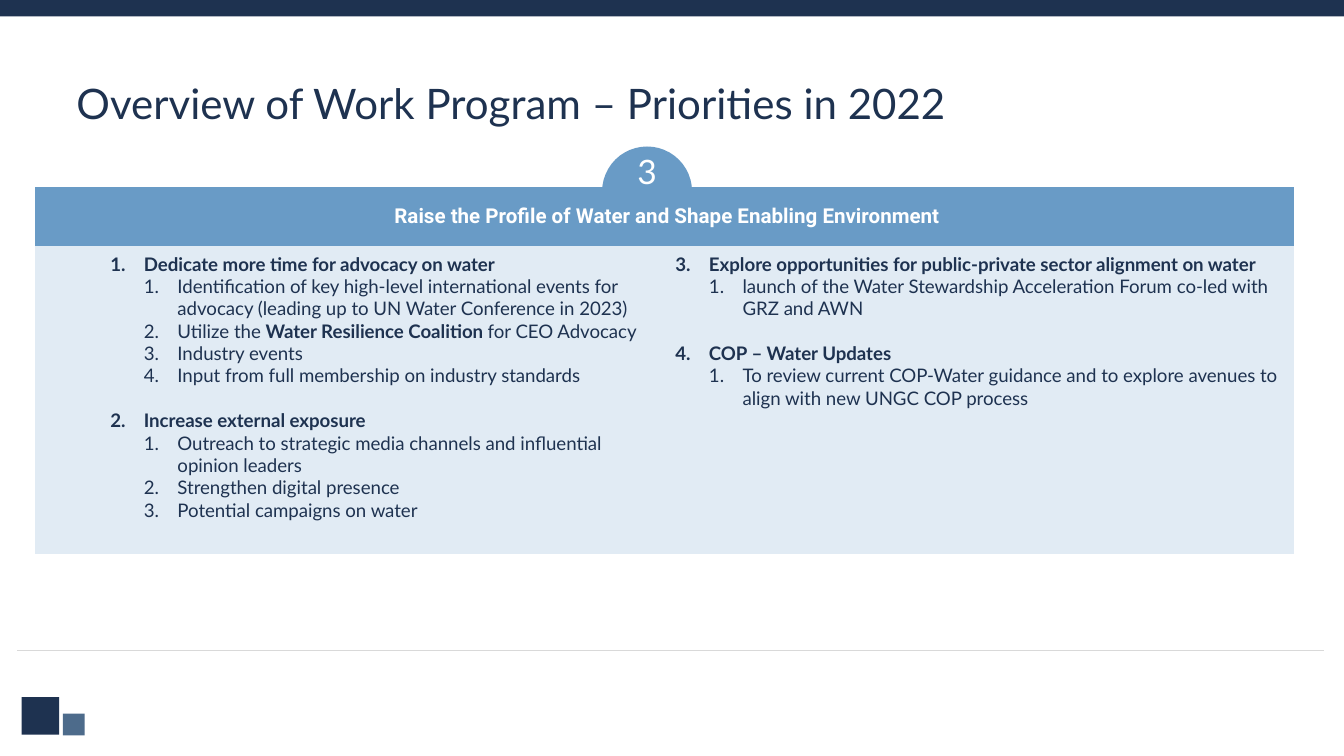
from lxml.etree import SubElement
from pptx import Presentation
from pptx.dml.color import RGBColor
from pptx.enum.shapes import MSO_CONNECTOR, MSO_SHAPE
from pptx.enum.text import MSO_ANCHOR, MSO_AUTO_SIZE, PP_ALIGN
from pptx.oxml import parse_xml
from pptx.oxml.ns import nsdecls, qn
from pptx.util import Cm, Pt

COLORS = {"navy": "1E3250", "slate": "4D6B8B", "blue": "699BC6",
          "pale": "E1EBF4", "gray": "D9D9D9", "white": "FFFFFF"}
NO_STYLE = "{2D5ABB26-0587-4C30-8999-92F81FD0307C}"
INDENT = 0.635

# Each column: left offset, first number, and (heading, items) topics.
# An item is a list of (text, bold) runs.
COLUMNS = [
    (1.27, 1, [
        ("Dedicate more time for advocacy on water", [
            [("Identification of key high-level international events for advocacy "
              "(leading up to UN Water Conference in 2023)", False)],
            [("Utilize the ", False), ("Water Resilience Coalition ", True),
             ("for CEO Advocacy", False)],
            [("Industry events", False)],
            [("Input from full membership on industry standards", False)],
        ]),
        ("Increase external exposure", [
            [("Outreach to strategic media channels and influential opinion leaders", False)],
            [("Strengthen digital presence", False)],
            [("Potential campaigns on water", False)],
        ]),
    ]),
    (0, 3, [
        ("Explore opportunities for public-private sector alignment on water", [
            [("launch of the Water Stewardship Acceleration Forum co-led with "
              "GRZ and AWN", False)],
        ]),
        ("COP – Water Updates", [
            [("To review current COP-Water guidance and to explore avenues to "
              "align with new UNGC COP process", False)],
        ]),
    ]),
]


def rgb(name):
    return RGBColor.from_string(COLORS[name])


def add_text(p, text, size=10, font="Lato", color="navy", bold=False):
    r = p.add_run()
    r.text = text
    r.font.size, r.font.name, r.font.bold = Pt(size), font, bold
    r.font.color.rgb = rgb(color)


def add_block(s, shape, color, x, y, w, h):
    sp = s.shapes.add_shape(shape, Cm(x), Cm(y), Cm(w), Cm(h))
    sp.shadow.inherit = False
    sp.fill.solid()
    sp.fill.fore_color.rgb = rgb(color)
    sp.line.fill.background()


def number_paragraph(p, level, left, start=1):
    p.level = level
    pPr = p._p.get_or_add_pPr()
    pPr.set("marL", str(Cm(left + INDENT * (level + 1))))
    pPr.set("indent", str(-Cm(INDENT)))
    bullet = SubElement(pPr, qn("a:buAutoNum"), type="arabicPeriod")
    if start > 1:
        bullet.set("startAt", str(start))


def add_frame(s, width):
    """Top bar, corner squares and footer rule."""
    add_block(s, MSO_SHAPE.RECTANGLE, "navy", 0.41, 13.18, 0.71, 0.71)
    add_block(s, MSO_SHAPE.RECTANGLE, "slate", 1.19, 13.49, 0.41, 0.41)
    add_block(s, MSO_SHAPE.RECTANGLE, "navy", 0, 0, width, 0.31)
    rule = s.shapes.add_connector(MSO_CONNECTOR.STRAIGHT,
                                  Cm(0.33), Cm(12.29), Cm(25.02), Cm(12.29))
    rule.line.color.rgb = rgb("gray")
    rule.line.width = Pt(0.75)
    SubElement(rule._element.spPr, qn("a:effectLst"))


def add_title(s, x, y, w, h):
    title = s.shapes.title
    title.left, title.top, title.width, title.height = Cm(x), Cm(y), Cm(w), Cm(h)
    tf = title.text_frame
    tf.auto_size = MSO_AUTO_SIZE.NONE
    tf.vertical_anchor = MSO_ANCHOR.TOP
    p = tf.paragraphs[0]
    p.alignment = PP_ALIGN.LEFT
    p.line_spacing = 0.9
    add_text(p, "Overview of Work Program – Priorities in 2022", size=22.5)


def add_badge(s, x, y, size):
    add_block(s, MSO_SHAPE.OVAL, "blue", x, y, size, size)
    label = s.shapes.add_textbox(Cm(x), Cm(y - 0.05), Cm(size), Cm(1.02))
    p = label.text_frame.paragraphs[0]
    p.alignment = PP_ALIGN.CENTER
    add_text(p, "3", size=18, color="white")


def fill_cell(cell, color, left_border):
    cell.fill.solid()
    cell.fill.fore_color.rgb = rgb(color)
    if left_border:
        cell._tc.get_or_add_tcPr().insert(0, parse_xml(
            f'<a:lnL {nsdecls("a")} w="{Pt(6)}"><a:solidFill>'
            f'<a:srgbClr val="{COLORS["white"]}"/></a:solidFill></a:lnL>'))


def add_topics(tf, left, start, topics):
    p = tf.paragraphs[0]
    for i, (heading, items) in enumerate(topics):
        if i:
            p = tf.add_paragraph()
            p.space_before = Pt(12)
        number_paragraph(p, 0, left, start)
        add_text(p, heading, bold=True)
        for item in items:
            p = tf.add_paragraph()
            number_paragraph(p, 1, left)
            for text, bold in item:
                add_text(p, text, bold=bold)


def add_priorities(s, x, y, w, header_h, body_h):
    frame = s.shapes.add_table(2, 2, Cm(x), Cm(y), Cm(w), Cm(header_h + body_h))
    table = frame.table
    table.first_row = table.horz_banding = False
    table._tbl.tblPr.find(qn("a:tableStyleId")).text = NO_STYLE
    table.rows[0].height, table.rows[1].height = Cm(header_h), Cm(body_h)

    header = table.cell(0, 0)
    header.merge(table.cell(0, 1))
    fill_cell(header, "blue", left_border=True)
    header.vertical_anchor = MSO_ANCHOR.MIDDLE
    header.margin_left = header.margin_right = Cm(0.05)
    header.margin_top = header.margin_bottom = 0
    p = header.text_frame.paragraphs[0]
    p.alignment = PP_ALIGN.CENTER
    p._p.get_or_add_pPr().set("marL", str(Cm(0.3)))
    add_text(p, "Raise the Profile of Water and Shape Enabling Environment ",
             size=11, font="Roboto", color="white", bold=True)

    for col, (left, start, topics) in enumerate(COLUMNS):
        cell = table.cell(1, col)
        fill_cell(cell, "pale", left_border=col == 0)
        add_topics(cell.text_frame, left, start, topics)


def main():
    prs = Presentation()
    prs.slide_width, prs.slide_height = Cm(25.4), Cm(14.29)
    s = prs.slides.add_slide(prs.slide_layouts[5])
    add_frame(s, 25.4)
    add_title(s, 1.19, 1.45, 22.99, 1.27)
    add_badge(s, 11.38, 2.77, 1.7)
    add_priorities(s, 0.56, 3.53, 23.9, 1.12, 5.82)
    prs.save("out.pptx")


if __name__ == "__main__":
    main()
